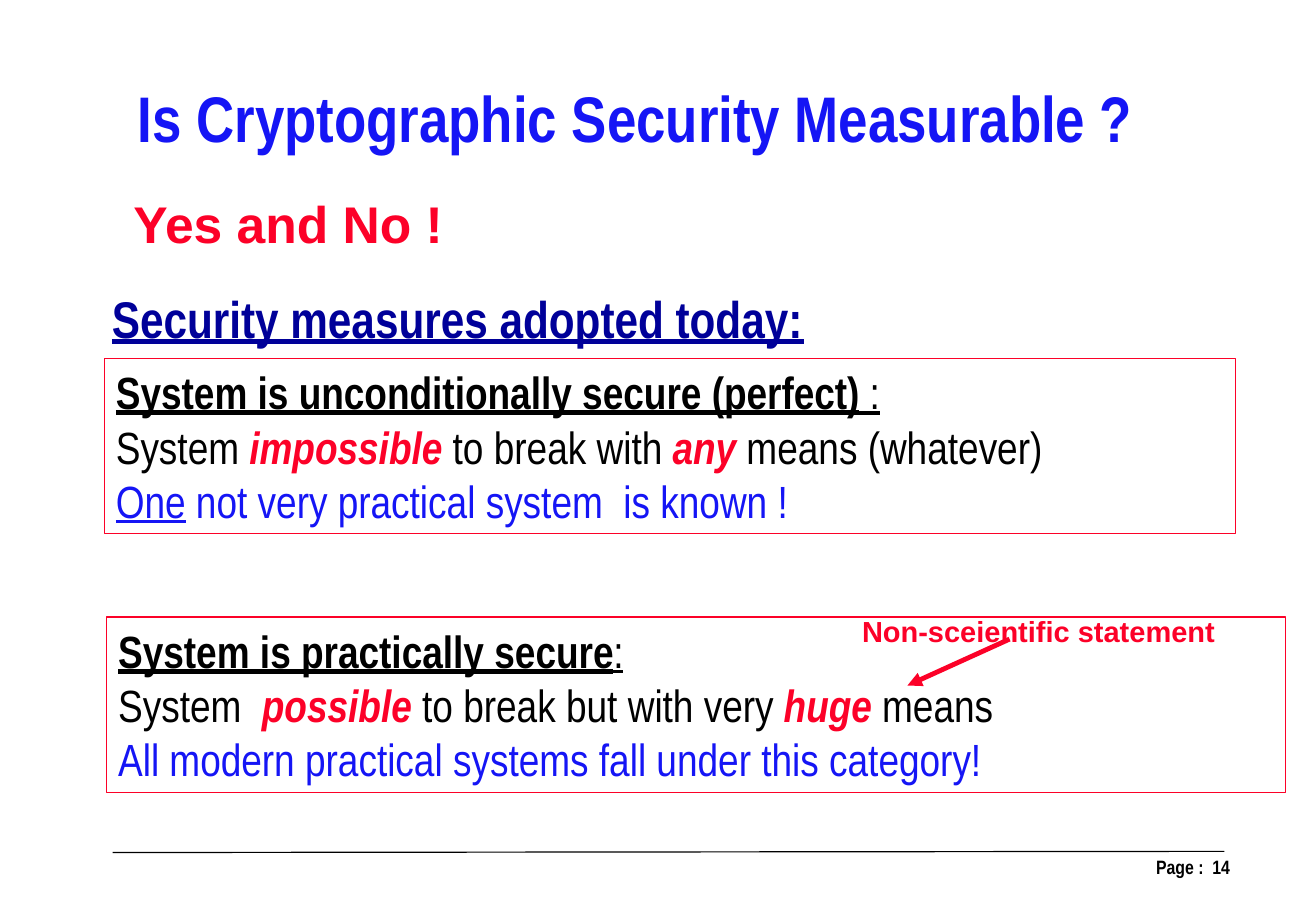
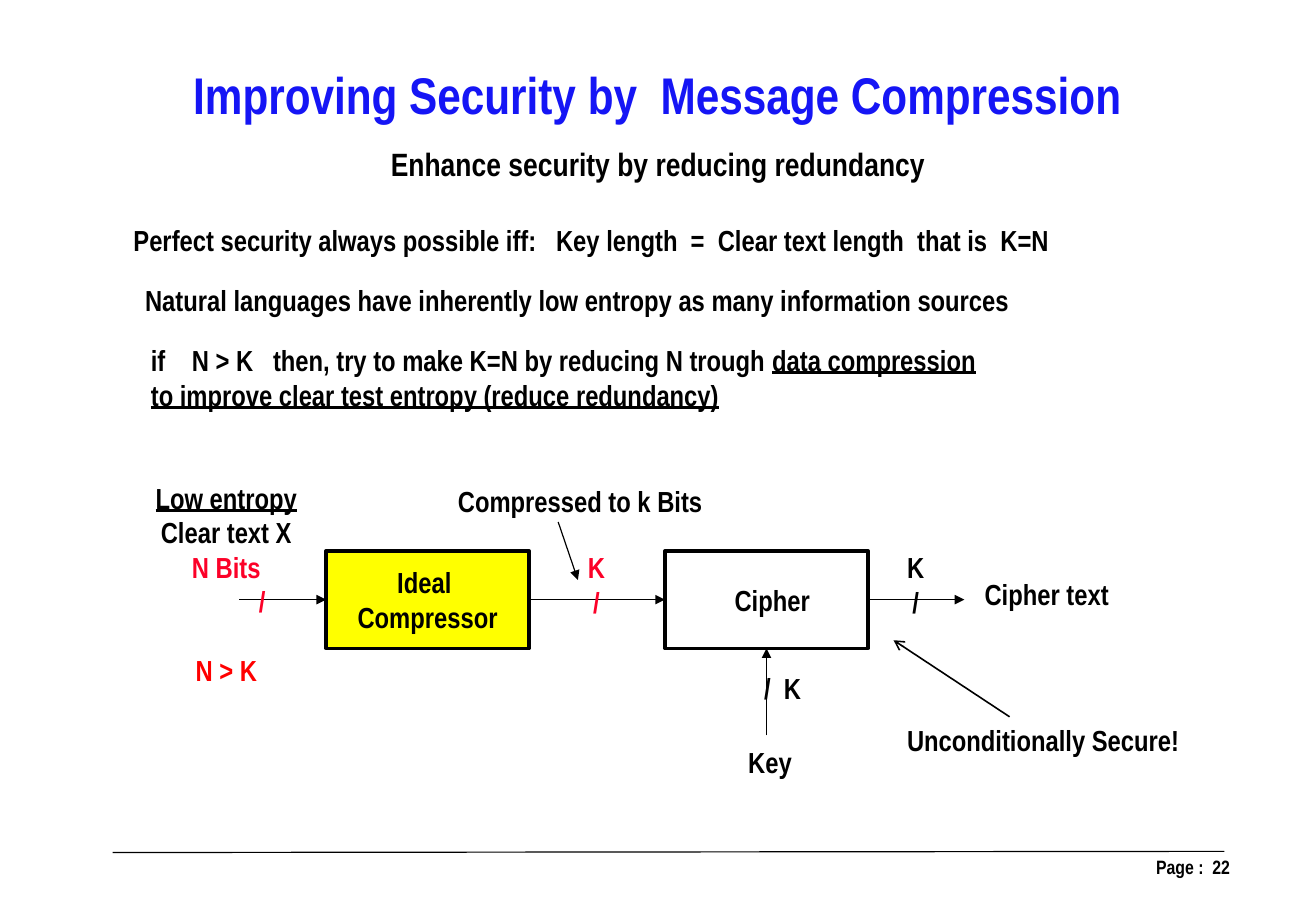
from lxml import etree
from pptx import Presentation
from pptx.dml.color import RGBColor as RGB
from pptx.enum.shapes import MSO_CONNECTOR as CONN, MSO_SHAPE as SHAPE
from pptx.enum.text import MSO_ANCHOR as ANCHOR, MSO_AUTO_SIZE as FIT, PP_ALIGN as AL
from pptx.oxml.ns import qn
from pptx.util import Inches, Pt

COLORS = {"blue": "1515F5", "navy": "000099", "red": "FC0128", "pure_red": "FF0000",
          "black": "000000", "yellow": "FFFF00"}
NARROW = dict(name="Arial Narrow", color="black", bold=True)
TITLE = dict(NARROW, color="blue")
LABEL = dict(NARROW, size=18)
PLAIN = dict(NARROW, size=28, bold=False)
HEAD = dict(bold=True, underline=True)
STRESS = dict(color="red", bold=True, italic=True)
BLUE = dict(color="blue")
RED = dict(color="red")
UNDER = dict(underline=True)
BREAK = ("\n", {})


def rgb(name):
    return RGB.from_string(COLORS[name])


# Text: a paragraph is a string or a list of (text, format changes) runs
def write(tf, paras, fmt, align=AL.CENTER, anchor=ANCHOR.MIDDLE, wrap=True, **para_fmt):
    for key, value in dict(auto_size=FIT.NONE, word_wrap=wrap, vertical_anchor=anchor).items():
        setattr(tf, key, value)
    for i, runs in enumerate(paras):
        p = tf.paragraphs[0] if i == 0 else tf.add_paragraph()
        for key, value in dict(para_fmt, alignment=align).items():
            setattr(p, key, value)
        for text, changes in [(runs, {})] if isinstance(runs, str) else runs:
            if text == "\n":
                p.add_line_break()
                continue
            r = p.add_run()
            r.text = text
            for key, value in {**fmt, **changes}.items():
                if key == "color":
                    r.font.color.rgb = rgb(value)
                else:
                    setattr(r.font, key, Pt(value) if key == "size" else value)


def place(sp, x, y, w, h):
    for key, value in dict(left=x, top=y, width=w, height=h).items():
        setattr(sp, key, Inches(value))
    return sp


def textbox(s, x, y, w, h, paras, fmt, **options):
    sp = s.shapes.add_textbox(Inches(x), Inches(y), Inches(w), Inches(h))
    write(sp.text_frame, paras, fmt, **options)
    return sp


def label(s, cx, cy, *paras, **changes):
    """Unwrapped text centred on a point."""
    w, h = 2.4, 0.1 + 0.3 * len(paras)
    textbox(s, cx - w / 2, cy - h / 2, w, h, paras, {**LABEL, **changes}, wrap=False)


def rect(s, x, y, w, h, line, width, paras, fmt, fill=None, align=AL.CENTER):
    sp = s.shapes.add_shape(SHAPE.RECTANGLE, Inches(x), Inches(y), Inches(w), Inches(h))
    sp.shadow.inherit = False
    if fill:
        sp.fill.solid()
        sp.fill.fore_color.rgb = rgb(fill)
    else:
        sp.fill.background()
    sp.line.color.rgb = rgb(line)
    sp.line.width = Pt(width)
    write(sp.text_frame, paras, fmt, align)
    return sp


def line(s, start, end, color="black", width=0.75, head=None, begin_at=None, end_at=None):
    c = s.shapes.add_connector(CONN.STRAIGHT, *map(Inches, start + end))
    c.line.color.rgb = rgb(color)
    c.line.width = Pt(width)
    if head:
        etree.SubElement(c.line._get_or_add_ln(), qn("a:tailEnd"), type=head)
    etree.SubElement(c._element.spPr, qn("a:effectLst"))
    if begin_at:
        c.begin_connect(*begin_at)
    if end_at:
        c.end_connect(*end_at)


# Shared frame: title, page number and footer rule
def new_slide(prs, layout, page, title_box, title, **options):
    s = prs.slides.add_slide(prs.slide_layouts[layout])
    write(place(s.shapes.title, *title_box).text_frame, title, TITLE, **options)
    sp = textbox(s, 8.14, 7.31, 2.58, 0.4, [f"Page :  {page}"], dict(NARROW, size=12),
                 align=AL.RIGHT, anchor=ANCHOR.TOP)
    sp.text_frame.margin_right = Inches(0.12)
    sp.text_frame.margin_top = Inches(0.06)
    line(s, (0.97, 7.35), (10.55, 7.34))
    return s


def definition(s, x, y, w, paras):
    rect(s, x, y, w, 1.51, "red", 0.75, paras, PLAIN, align=AL.LEFT)


def measurable_slide(prs):
    s = new_slide(prs, 5, 14, (0.27, 0.62, 10.41, 0.77),
                  [[("Is Cryptographic Security Measurable ?", dict(size=40))]])
    definition(s, 0.9, 3.09, 9.75, [
        [("System is unconditionally secure (perfect)", HEAD), (" :", UNDER)],
        [("System ", {}), ("impossible ", STRESS), ("to break with ", {}),
         ("any", STRESS), (" means (whatever)", {})],
        [("One", {**BLUE, **UNDER}), (" not very practical system  is known !", BLUE)]])
    definition(s, 0.92, 5.32, 10.16, [
        [("System is practically secure", HEAD), (":", UNDER)],
        [("System  ", {}), ("possible", STRESS), (" to break but with very ", {}),
         ("huge ", STRESS), ("means", {})],
        [("All modern practical systems fall under this category!", BLUE)]])
    # Headings and remark
    answer = dict(name="Arial", color="red", bold=True)
    textbox(s, 1.04, 1.61, 2.89, 0.63, ["Yes and No !"], dict(answer, size=32), wrap=False)
    textbox(s, 7.33, 5.24, 3.24, 0.4, ["Non-sceientific statement"],
            dict(answer, size=18), wrap=False)
    line(s, (8.7, 5.51), (7.82, 5.91), "red", 3, "triangle")
    textbox(s, 0.84, 2.42, 6.21, 0.64, ["Security measures adopted today:"],
            dict(NARROW, size=32, color="navy", underline=True), wrap=False)


def statements(body):
    write(place(body, 1.05, 1.87, 8.53, 1.74).text_frame, [
        "Perfect security always possible iff:   Key length  =  Clear text length  that is  K=N",
        "Natural languages have inherently low entropy as many information sources",
        [("if    N > K   then, try to make K=N by reducing N trough ", {}),
         ("data compression", UNDER), BREAK,
         ("to improve clear test entropy (reduce redundancy)", UNDER)],
    ], LABEL, AL.LEFT, ANCHOR.TOP, space_before=Pt(0), space_after=Pt(15.5))
    for p, left in zip(body.text_frame.paragraphs, (0, 0.1, 0.15)):
        pPr = p._p.get_or_add_pPr()
        pPr.set("marL", str(Inches(left)))
        pPr.set("indent", "0")
        etree.SubElement(pPr, qn("a:buNone"))
    # A line break keeps the text size of its paragraph
    for br in body._element.iter(qn("a:br")):
        etree.SubElement(br, qn("a:rPr"), sz=str(LABEL["size"] * 100))


def cipher_chain(s, x, y):
    """Compressor and cipher in a row; x, y is the compressor's top left corner."""
    w, h, gap = 1.75, 0.84, 1.17
    mid, cipher_x = y + h / 2, x + w + gap
    key_x, out_x = cipher_x + w / 2, cipher_x + w
    compressor = rect(s, x, y, w, h, "black", 2.25, ["Ideal ", "Compressor"], LABEL, "yellow")
    cipher = rect(s, cipher_x, y, w, h, "black", 2.25, ["Cipher"], LABEL)
    cipher.text_frame.margin_right = 0
    # Data flow
    line(s, (x - 0.75, mid), (x, mid), head="triangle", end_at=(compressor, 1))
    line(s, (x + w, mid), (cipher_x, mid), head="triangle",
         begin_at=(compressor, 3), end_at=(cipher, 1))
    line(s, (out_x, mid), (out_x + 0.83, mid), head="triangle", begin_at=(cipher, 3))
    line(s, (key_x, y + 1.59), (key_x, y + h), head="triangle", end_at=(cipher, 2))
    # Labels on the flow
    label(s, x - 0.86, y - 0.16, [("Low entropy", UNDER)], "Clear text X", [("N Bits", RED)])
    label(s, x - 0.55, y + 0.43, "/", color="red")
    label(s, x - 0.86, y + 1.03, "N > K", color="pure_red")
    label(s, x + 2.33, y + 0.29, "K", "/", color="red")
    label(s, out_x + 0.41, y + 0.29, "K", "/")
    label(s, out_x + 1.54, y + 0.37, "Cipher text")
    label(s, key_x + 0.14, y + 1.18, "/  K")
    label(s, key_x + 0.03, y + 1.82, "Key")
    # Remarks
    label(s, x + 2.19, y - 0.43, "Compressed to k Bits")
    line(s, (x + 2, y - 0.25), (x + 2.17, y + 0.25), head="triangle")
    label(s, out_x + 1.51, y + 1.63, "Unconditionally Secure!")
    line(s, (out_x + 1.22, y + 1.43), (out_x + 0.22, y + 0.77), width=1, head="arrow")


def compression_slide(prs):
    s = new_slide(prs, 1, 22, (1.53, 0.49, 8.28, 1.14), [
        [("Improving Security by  Message Compression", dict(size=32))],
        [("Enhance security by reducing redundancy", dict(size=20, color="black"))],
    ], wrap=False, space_before=Pt(6), space_after=Pt(6))
    statements(s.placeholders[1])
    cipher_chain(s, 2.81, 4.75)


def main():
    prs = Presentation()
    prs.slide_width, prs.slide_height = Inches(11.34), Inches(7.88)
    measurable_slide(prs)
    compression_slide(prs)
    prs.save("out.pptx")


if __name__ == "__main__":
    main()
